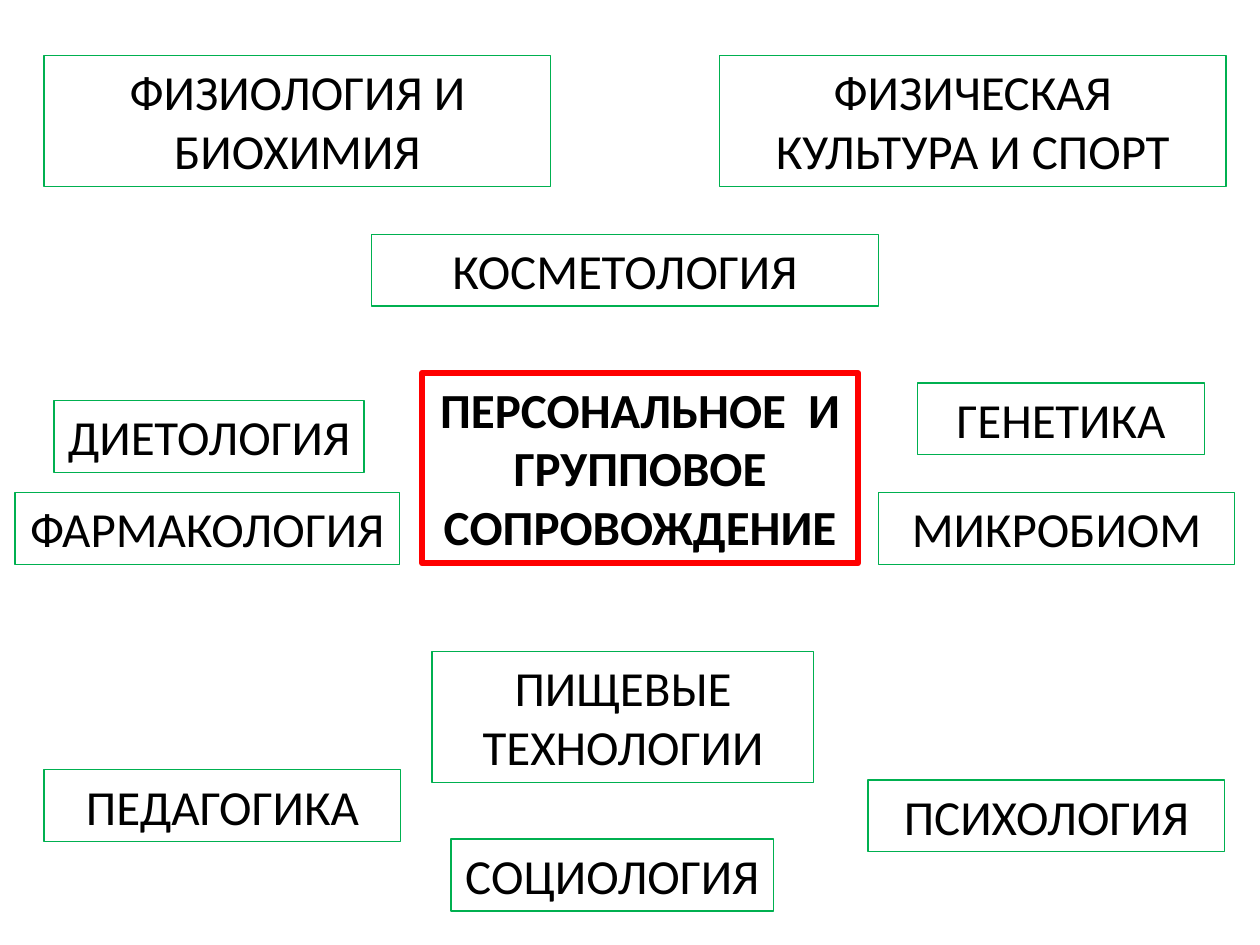
from dataclasses import dataclass

import pptx
import pptx.dml.color
import pptx.enum.text
import pptx.presentation
import pptx.slide
import pptx.util
from pptx.util import Inches


@dataclass(frozen=True)
class Theme:
    font: str = "Calibri"
    size: float = 28
    text: str = "000000"
    field_line: str = "00B050"
    core_line: str = "FF0000"
    field_weight: float = 0.75
    core_weight: float = 3.5


@dataclass(frozen=True)
class Topic:
    label: str
    left: float
    top: float
    width: float
    lines: int = 1
    wrap: bool = True
    core: bool = False


THEME = Theme()
BOX_HEIGHTS = {1: 0.57, 2: 1.04, 3: 1.51}
WIDE = 4.02
MEDIUM = 2.83
EDGE = 0.35
TOP_ROW = 0.44
MIDDLE_ROW = 3.91

TOPICS = [
    Topic("ПЕРСОНАЛЬНОЕ  И ГРУППОВОЕ СОПРОВОЖДЕНИЕ", 3.35, 2.96, 3.46, lines=3, core=True),
    Topic("ДИЕТОЛОГИЯ", 0.43, 3.18, 2.46, wrap=False),
    Topic("ПЕДАГОГИКА", EDGE, 6.11, MEDIUM),
    Topic("СОЦИОЛОГИЯ", 3.58, 6.66, 2.56, wrap=False),
    Topic("ПИЩЕВЫЕ ТЕХНОЛОГИИ", 3.43, 5.17, 3.03, lines=2),
    Topic("ГЕНЕТИКА", 7.28, 3.04, 2.28),
    Topic("ФИЗИОЛОГИЯ И БИОХИМИЯ", EDGE, TOP_ROW, WIDE, lines=2),
    Topic("ФИЗИЧЕСКАЯ КУЛЬТУРА И СПОРТ", 5.71, TOP_ROW, WIDE, lines=2),
    Topic("КОСМЕТОЛОГИЯ", 2.95, 1.86, WIDE),
    Topic("ФАРМАКОЛОГИЯ", 0.12, MIDDLE_ROW, 3.05, wrap=False),
    Topic("ПСИХОЛОГИЯ", 6.89, 6.19, MEDIUM),
    Topic("МИКРОБИОМ", 6.97, MIDDLE_ROW, MEDIUM),
]


def rgb(value: str) -> pptx.dml.color.RGBColor:
    return pptx.dml.color.RGBColor.from_string(value)


def draw_topic(slide: pptx.slide.Slide, topic: Topic) -> None:
    frame = slide.shapes.add_textbox(
        Inches(topic.left),
        Inches(topic.top),
        Inches(topic.width),
        Inches(BOX_HEIGHTS[topic.lines]),
    )
    frame.line.color.rgb = rgb(THEME.core_line if topic.core else THEME.field_line)
    frame.line.width = pptx.util.Pt(THEME.core_weight if topic.core else THEME.field_weight)

    content = frame.text_frame
    content.word_wrap = topic.wrap
    content.auto_size = pptx.enum.text.MSO_AUTO_SIZE.SHAPE_TO_FIT_TEXT
    caption = content.paragraphs[0]
    caption.alignment = pptx.enum.text.PP_ALIGN.CENTER
    wording = caption.add_run()
    wording.text = topic.label
    wording.font.name = THEME.font
    wording.font.size = pptx.util.Pt(THEME.size)
    wording.font.bold = topic.core
    wording.font.color.rgb = rgb(THEME.text)


def main() -> None:
    deck: pptx.presentation.Presentation = pptx.Presentation()
    deck.slide_width = Inches(10)
    deck.slide_height = Inches(7.5)
    support_map = deck.slides.add_slide(deck.slide_layouts[6])
    for topic in TOPICS:
        draw_topic(support_map, topic)
    deck.save("out.pptx")


if __name__ == "__main__":
    main()
